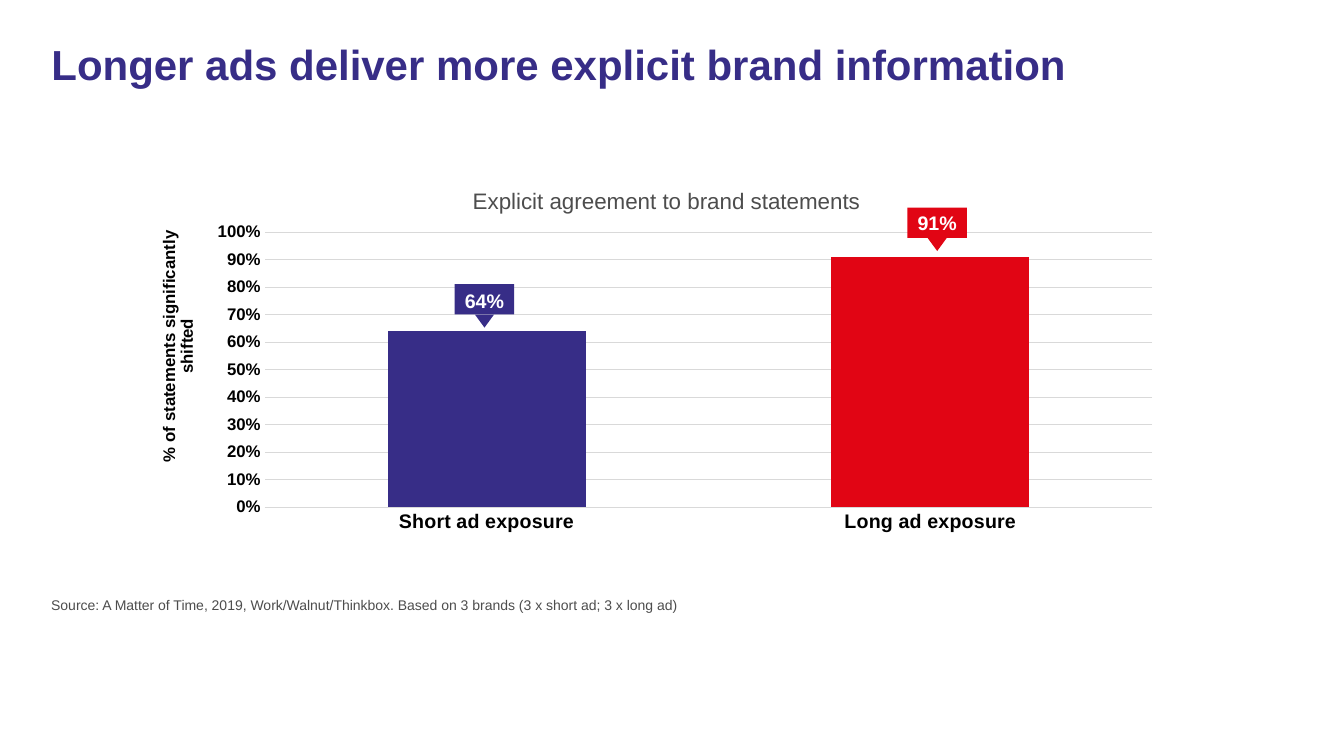
from dataclasses import dataclass

from lxml.etree import _Element
from pptx import Presentation
from pptx.chart.axis import ValueAxis
from pptx.chart.data import CategoryChartData
from pptx.dml.color import RGBColor
from pptx.enum.chart import XL_CHART_TYPE, XL_TICK_MARK
from pptx.enum.shapes import MSO_SHAPE
from pptx.enum.text import MSO_ANCHOR, MSO_AUTO_SIZE, PP_ALIGN
from pptx.oxml import parse_xml
from pptx.oxml.ns import nsdecls
from pptx.shapes.base import BaseShape
from pptx.slide import Slide
from pptx.text.text import Font
from pptx.util import Inches, Pt

COLUMNS = XL_CHART_TYPE.COLUMN_CLUSTERED
NO_TICK = XL_TICK_MARK.NONE
RECTANGLE, TRIANGLE = MSO_SHAPE.RECTANGLE, MSO_SHAPE.ISOSCELES_TRIANGLE
TOP = MSO_ANCHOR.TOP
FIXED = MSO_AUTO_SIZE.NONE
LEFT, CENTER = PP_ALIGN.LEFT, PP_ALIGN.CENTER

INDIGO = RGBColor(0x37, 0x2D, 0x87)
RED = RGBColor(0xE1, 0x05, 0x14)
GREY = RGBColor(0x4D, 0x4D, 0x4D)
GRID = RGBColor(0xD9, 0xD9, 0xD9)
BLACK = RGBColor(0, 0, 0)
WHITE = RGBColor(255, 255, 255)


@dataclass
class Exposure:
    name: str
    share: float
    color: RGBColor
    flag_left: float
    flag_top: float
    label_top: float


@dataclass
class Label:
    text: str
    left: float
    top: float
    width: float
    height: float
    size: int
    color: RGBColor
    bold: bool = False
    align: PP_ALIGN = LEFT


EXPOSURES = [
    Exposure("Short ad exposure", 0.64, INDIGO, 4.51, 2.82, 2.82),
    Exposure("Long ad exposure", 0.91, RED, 9.0, 2.06, 2.04),
]
TITLE = Label("Longer ads deliver more explicit brand information",
              0.41, 0.39, 12.4, 1.12, 30, INDIGO, True)
LABELS = [
    Label("Source: A Matter of Time, 2019, Work/Walnut/Thinkbox. "
          "Based on 3 brands (3 x short ad; 3 x long ad)",
          0.41, 5.87, 12.4, 0.33, 10, GREY),
    Label("Explicit agreement to brand statements",
          4.02, 1.81, 5.18, 0.37, 16, GREY, align=CENTER),
]


def style_font(font: Font, size: int, color: RGBColor, bold: bool) -> None:
    for name, value in {"name": "Arial", "size": Pt(size), "bold": bold}.items():
        setattr(font, name, value)
    font.color.rgb = color


def fill_label(box: BaseShape, label: Label) -> None:
    frame = box.text_frame
    for name, value in {"word_wrap": True, "auto_size": FIXED,
                        "vertical_anchor": TOP}.items():
        setattr(frame, name, value)
    para = frame.paragraphs[0]
    para.alignment = label.align
    span = para.add_run()
    span.text = label.text
    style_font(span.font, label.size, label.color, label.bold)


def add_label(shapes, label: Label) -> None:
    box = shapes.add_textbox(Inches(label.left), Inches(label.top),
                             Inches(label.width), Inches(label.height))
    fill_label(box, label)


def add_title(page: Slide) -> None:
    box = page.shapes.title
    for name in ("left", "top", "width", "height"):
        setattr(box, name, Inches(getattr(TITLE, name)))
    fill_label(box, TITLE)
    box.text_frame.paragraphs[0].line_spacing = 0.9


def set_layout(holder: _Element, index: int, settings: dict[str, object]) -> None:
    """Place a chart part by hand, in fractions of the chart."""
    for old in holder.findall("c:layout", holder.nsmap):
        holder.remove(old)
    values = "".join(f'<c:{tag} val="{value}"/>' for tag, value in settings.items())
    holder.insert(index, parse_xml(
        f'<c:layout {nsdecls("c")}><c:manualLayout>{values}'
        "</c:manualLayout></c:layout>"))


def style_value_axis(axis: ValueAxis) -> None:
    for name, value in {"minimum_scale": 0, "maximum_scale": 1, "major_unit": 0.1,
                        "has_major_gridlines": True}.items():
        setattr(axis, name, value)
    axis.tick_labels.number_format = "0%"
    axis.tick_labels.number_format_is_linked = False
    axis.format.line.fill.background()
    grid = axis.major_gridlines.format.line
    grid.color.rgb, grid.width = GRID, Pt(0.75)

    frame = axis.axis_title.text_frame
    span = frame.paragraphs[0].add_run()
    span.text = "% of statements significantly shifted"
    style_font(span.font, 12, BLACK, True)
    title = axis.axis_title._element
    body = title.xpath(".//a:bodyPr")[0]
    body.set("rot", "-5400000")
    body.set("vert", "horz")
    set_layout(title, 1, {"xMode": "edge", "yMode": "edge", "x": 0.01, "y": 0.03})


def add_exposure_chart(page: Slide) -> None:
    data = CategoryChartData(number_format="0%")
    data.categories = [exposure.name for exposure in EXPOSURES]
    data.add_series("Series 1", [exposure.share for exposure in EXPOSURES])
    chart = page.shapes.add_chart(COLUMNS, Inches(1.44), Inches(2.15),
                                  Inches(10.13), Inches(3.58), data).chart
    chart.has_legend = chart.has_title = False
    style_font(chart.font, 10, BLACK, False)

    plot = chart.plots[0]
    for name, value in {"gap_width": 124, "overlap": -10,
                        "vary_by_categories": False}.items():
        setattr(plot, name, value)
    bars = plot.series[0]
    bars.format.fill.solid()
    bars.format.fill.fore_color.rgb = INDIGO
    for index, exposure in enumerate(EXPOSURES):
        fill = bars.points[index].format.fill
        fill.solid()
        fill.fore_color.rgb = exposure.color

    for axis, size in ((chart.category_axis, 14), (chart.value_axis, 12)):
        axis.major_tick_mark = axis.minor_tick_mark = NO_TICK
        style_font(axis.tick_labels.font, size, BLACK, True)
    line = chart.category_axis.format.line
    line.color.rgb, line.width = GRID, Pt(0.75)
    style_value_axis(chart.value_axis)
    area = chart._chartSpace.xpath("c:chart/c:plotArea")[0]
    set_layout(area, 0, {"layoutTarget": "inner", "xMode": "edge", "yMode": "edge",
                         "x": 0.117, "y": 0.043, "w": 0.869, "h": 0.762})


def add_flag(page: Slide, exposure: Exposure) -> None:
    """Add the pointed value marker above one column."""
    group = page.shapes.add_group_shape()
    left, top = exposure.flag_left, exposure.flag_top
    for kind, x, y, width, height, turn in (
            (RECTANGLE, left, top, 0.59, 0.3, 0),
            (TRIANGLE, left + 0.2, top + 0.3, 0.19, 0.13, 180)):
        part = group.shapes.add_shape(kind, Inches(x), Inches(y),
                                      Inches(width), Inches(height))
        part.rotation = turn
        part.shadow.inherit = False
        part.fill.solid()
        part.fill.fore_color.rgb = exposure.color
        part.line.fill.background()
    add_label(group.shapes, Label(f"{exposure.share:.0%}", left - 0.1,
                                  exposure.label_top, 0.79, 0.34, 14, WHITE,
                                  True, CENTER))


def main() -> None:
    deck = Presentation()
    deck.slide_width, deck.slide_height = Inches(13.33), Inches(7.5)
    page = deck.slides.add_slide(deck.slide_layouts[5])
    add_title(page)
    add_exposure_chart(page)
    for label in LABELS:
        add_label(page.shapes, label)
    for exposure in EXPOSURES:
        add_flag(page, exposure)
    deck.save("out.pptx")


if __name__ == "__main__":
    main()
